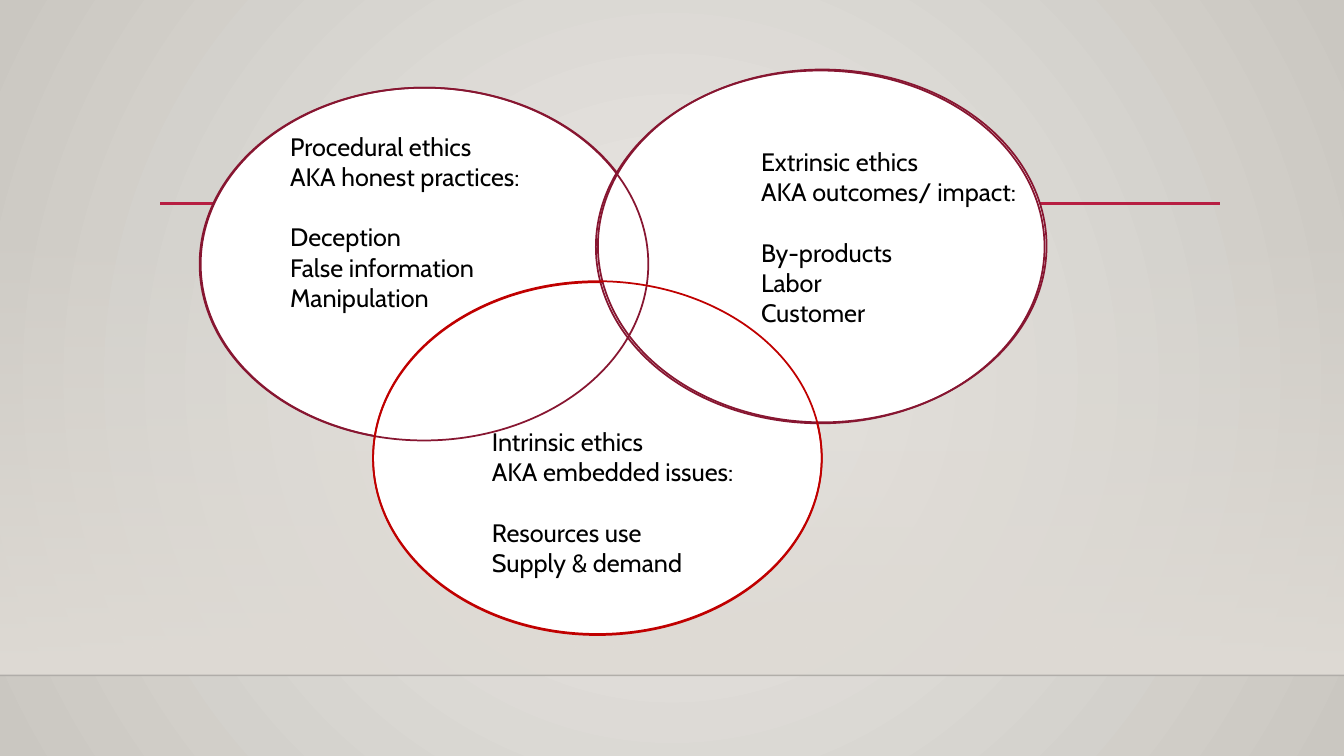
import pptx
import pptx.dml.color
import pptx.enum.shapes
import pptx.oxml
import pptx.oxml.ns
import pptx.util
from dataclasses import dataclass

Inches = pptx.util.Inches
Pt = pptx.util.Pt
qn = pptx.oxml.ns.qn


@dataclass(frozen=True)
class Theme:
    font: str = "Cabin"
    text_size: float = 18
    group_gap: float = 21.6
    outline: float = 1.25
    text: str = "000000"
    white: str = "FFFFFF"
    wine: str = "871631"
    red: str = "C00000"
    crimson: str = "B71E42"
    floor_edge: str = "000001"
    wall: str = "DFDBD5"
    glow: str = "ECEAE7"
    shade: str = "CAC7C1"


def color(value):
    return pptx.dml.color.RGBColor.from_string(value)


def add_child(parent, tag, **attributes):
    child = parent.makeelement(qn(tag), attributes)
    parent.append(child)
    return child


def set_opacity(element, percent):
    add_child(element.find(".//" + qn("a:srgbClr")), "a:alpha", val=str(percent * 1000))


def write_text(frame, groups, *, font, size, text_color, group_gap):
    """Write groups of lines, with a gap before every group but the first."""
    lines = [(line, group > 0 and index == 0)
             for group, members in enumerate(groups)
             for index, line in enumerate(members)]
    for number, (line, opens_group) in enumerate(lines):
        paragraph = frame.add_paragraph() if number else frame.paragraphs[0]
        if opens_group:
            paragraph.space_before = Pt(group_gap)
        run = paragraph.add_run()
        run.text = line
        run.font.name = font
        run.font.size = Pt(size)
        run.font.color.rgb = color(text_color)


class SlideBuilder:
    def __init__(self, slide, theme):
        self.slide = slide
        self.theme = theme

    def gradient(self, fill, owner, colors):
        fill.gradient()
        for stop, value in zip(fill.gradient_stops, colors):
            stop.color.rgb = color(value)
        return owner.find(".//" + qn("a:gradFill"))

    def background(self, center, edge):
        gradient = self.gradient(self.slide.background.fill, self.slide._element, (center, edge))
        gradient.remove(gradient.find(qn("a:lin")))
        circle = add_child(gradient, "a:path", path="circle")
        add_child(circle, "a:fillToRect", l="50000", t="50000", r="50000", b="50000")

    def shape(self, kind, left, top, width, height):
        shape = self.slide.shapes.add_shape(
            kind, Inches(left), Inches(top), Inches(width), Inches(height))
        shape.shadow.inherit = False
        return shape

    def fading_wall(self, left, top, width, height):
        shape = self.shape(pptx.enum.shapes.MSO_SHAPE.RECTANGLE, left, top, width, height)
        shape.line.fill.background()
        gradient = self.gradient(shape.fill, shape._element, (self.theme.wall,) * 2)
        gradient.find(qn("a:lin")).set("ang", "5400000")
        set_opacity(gradient, 0)

    def ellipse(self, left, top, width, height, line_color, fill_color=None):
        shape = self.shape(pptx.enum.shapes.MSO_SHAPE.OVAL, left, top, width, height)
        if fill_color:
            shape.fill.solid()
            shape.fill.fore_color.rgb = color(fill_color)
        else:
            shape.fill.background()
        shape.line.color.rgb = color(line_color)
        shape.line.width = Pt(self.theme.outline)

    def horizontal_line(self, start, end, top, line_color, width, opacity=100):
        connector = self.slide.shapes.add_connector(
            pptx.enum.shapes.MSO_CONNECTOR.STRAIGHT,
            Inches(start), Inches(top), Inches(end), Inches(top))
        connector.line.color.rgb = color(line_color)
        connector.line.width = Pt(width)
        if opacity < 100:
            set_opacity(connector._element.spPr, opacity)
        add_child(connector._element.spPr, "a:effectLst")

    def text(self, left, top, width, height, groups):
        box = self.slide.shapes.add_textbox(
            Inches(left), Inches(top), Inches(width), Inches(height))
        box.text_frame.word_wrap = True
        write_text(box.text_frame, groups, font=self.theme.font, size=self.theme.text_size,
                   text_color=self.theme.text, group_gap=self.theme.group_gap)


def main():
    presentation = pptx.Presentation()
    presentation.slide_width = Inches(13.33)
    presentation.slide_height = Inches(7.5)
    theme = Theme()
    builder = SlideBuilder(
        presentation.slides.add_slide(presentation.slide_layouts[6]), theme)

    # Backdrop: wall, floor edge and title rule
    builder.background(theme.glow, theme.shade)
    builder.fading_wall(0, 2.21, 13.33, 4.49)
    builder.horizontal_line(0, 13.33, 6.7, theme.floor_edge, 1, opacity=20)
    builder.horizontal_line(1.59, 12.1, 2.02, theme.crimson, 2.5)

    # Filled circles of the Venn diagram
    circle_size = (4.45, 3.5)
    for left, top, line_color in ((1.99, 0.87, theme.wine),
                                  (3.7, 2.8, theme.red),
                                  (5.93, 0.69, theme.wine)):
        builder.ellipse(left, top, *circle_size, line_color, theme.white)

    # Kinds of ethics
    text_size = (3.37, 1.92)
    procedural = (("Procedural ethics", "AKA honest practices:"),
                  ("Deception", "False information", "Manipulation"))
    intrinsic = (("Intrinsic ethics", "AKA embedded issues:"),
                 ("Resources use", "Supply & demand"))
    extrinsic = (("Extrinsic ethics", "AKA outcomes/ impact:"),
                 ("By-products", "Labor", "Customer"))
    for left, top, groups in ((2.78, 1.25, procedural),
                              (4.78, 4.18, intrinsic),
                              (7.45, 1.4, extrinsic)):
        builder.text(left, top, *text_size, groups)

    # Outlines that stay visible where the circles overlap
    for left, top, line_color in ((1.98, 0.87, theme.wine),
                                  (5.91, 0.7, theme.wine),
                                  (3.7, 2.79, theme.red)):
        builder.ellipse(left, top, *circle_size, line_color)

    presentation.save("out.pptx")


if __name__ == "__main__":
    main()
